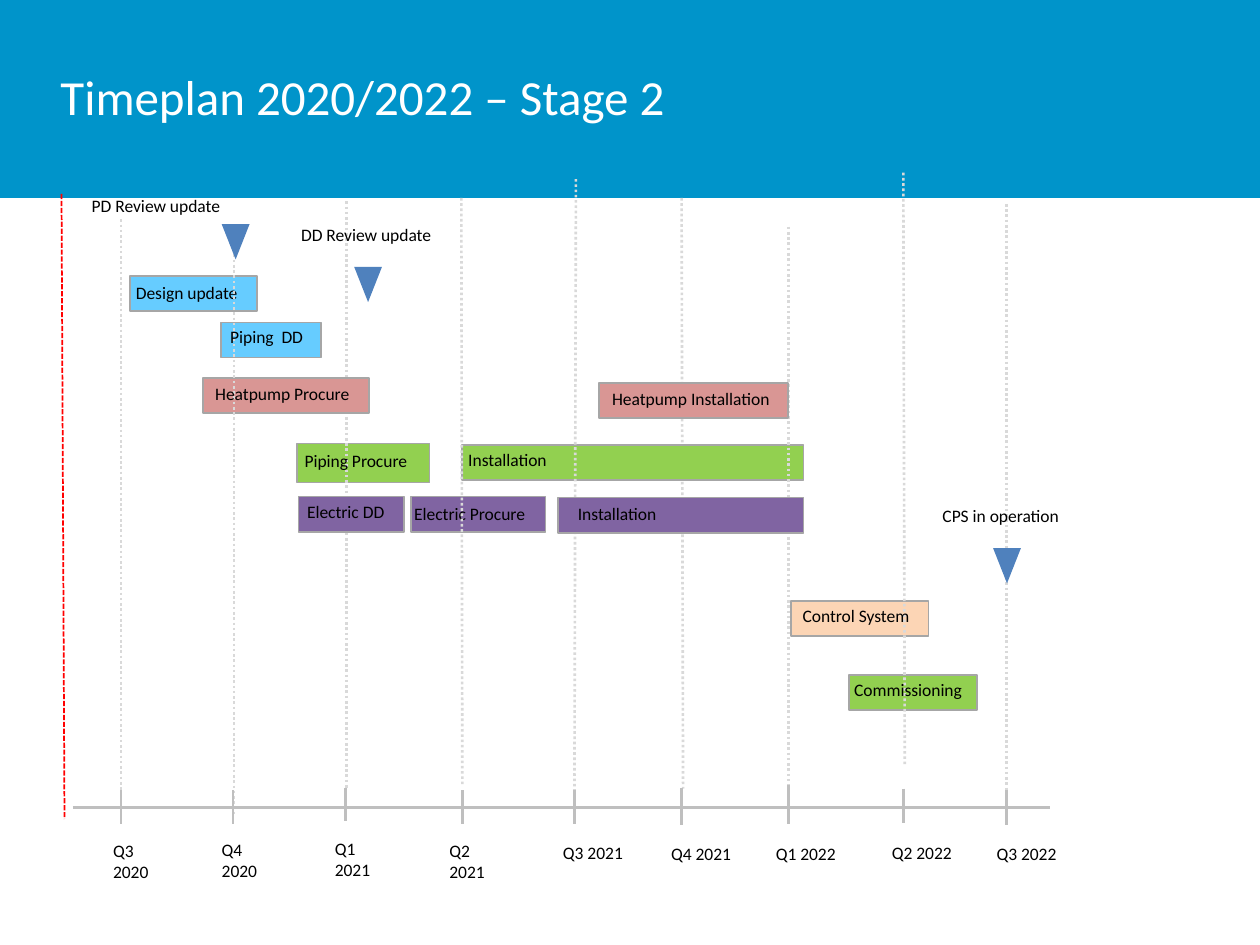
from lxml import etree
from pptx import Presentation
from pptx.dml.color import RGBColor as RGB
from pptx.enum.dml import MSO_LINE as Dash
from pptx.enum.shapes import MSO_CONNECTOR as Conn, MSO_SHAPE as Shape
from pptx.enum.text import MSO_ANCHOR as Anchor
from pptx.oxml.ns import qn
from pptx.util import Cm, Pt

COLORS = {
    "band": "0094CA", "white": "FFFFFF", "black": "000000", "edge": "A6A6A6",
    "sky": "66CCFF", "green": "92D050", "peach": "FCD5B5", "purple": "8064A2",
    "rose": "D99694", "marker": "4F81BD", "guide": "D9D9D9", "axis": "BFBFBF",
    "today": "FF0000",
}

# (name, colour, bar left/top/width/height, label left/top/width)
BACK_BARS = [
    ("Piping  DD", "sky", (4.45, 6.5, 2.03, 0.71), (4.39, 6.45, 2.31)),
    ("Piping Procure", "green", (5.99, 8.94, 2.67, 0.79), (5.89, 8.94, 2.82)),
    ("Commissioning", "green", (17.12, 13.61, 2.57, 0.71), (16.97, 13.56, 2.92)),
    ("Control System", "peach", (15.95, 12.12, 2.77, 0.71), (15.93, 12.07, 3)),
    ("Electric Procure", "purple", (8.28, 10.01, 2.72, 0.71), (8.1, 10.01, 3.1)),
]
DESIGN_BAR = ("Design update", "sky", (2.62, 5.56, 2.57, 0.71), (2.49, 5.56, 4.37))
MIDDLE_BARS = [
    ("Installation", "green", (9.32, 8.97, 6.88, 0.71), (9.19, 8.92, 3.99)),
    ("Electric DD", "purple", (6.02, 10.01, 2.13, 0.71), (5.94, 9.98, 2.29)),
    ("Heatpump Procure", "rose", (4.09, 7.62, 3.35, 0.71), (4.09, 7.59, 3.48)),
]
FRONT_BARS = [
    ("Installation", "purple", (11.25, 10.03, 4.95, 0.71), (11.4, 10.01, 4.22)),
    ("Heatpump Installation", "rose", (12.07, 7.72, 3.81, 0.71), (12.09, 7.7, 4.19)),
]

# Marker left/top, label left/top/width
MILESTONES = [
    ("PD Review update", (4.47, 4.52), (1.6, 3.81, 3.94)),
    ("DD Review update", (7.14, 5.38), (5.82, 4.39, 3.86)),
    ("CPS in operation", (20.02, 11.05), (18.75, 10.06, 3.43)),
]

# Tick x/top/bottom, label left/top/width
QUARTERS = [
    ("Q3 2020", (2.44, 15.93, 16.61), (2.03, 16.81, 1.5)),
    ("Q4 2020", (4.7, 15.93, 16.61), (4.22, 16.79, 1.5)),
    ("Q1 2021", (6.96, 15.88, 16.56), (6.5, 16.76, 1.45)),
    ("Q2 2021", (9.32, 15.93, 16.61), (8.81, 16.81, 1.45)),
    ("Q3 2021", (11.58, 15.93, 16.61), (11.1, 16.84, 1.8)),
    ("Q4 2021", (13.74, 15.88, 16.64), (13.28, 16.87, 1.8)),
    ("Q1 2022", (15.9, 15.82, 16.61), (15.39, 16.87, 1.8)),
    ("Q2 2022", (18.21, 15.9, 16.59), (17.73, 16.84, 1.8)),
    ("Q3 2022", (20.29, 15.93, 16.64), (19.84, 16.87, 1.8)),
]

# Dotted guides, from x/y to x/y, by drawing depth
BACK_GUIDES = [(13.74, 3.99, 13.77, 15.9), (6.98, 4.06, 6.98, 15.88)]
MIDDLE_GUIDES = [
    (18.21, 3.48, 18.24, 15.44), (2.44, 4.42, 2.44, 16.23),
    (4.72, 4.6, 4.72, 16.41), (11.61, 3.61, 11.58, 15.98),
    (15.9, 4.57, 15.9, 16.38), (20.29, 4.11, 20.29, 15.93),
]
FRONT_GUIDES = [(9.3, 3.99, 9.32, 15.82)]


class Timeplan:
    font = "Calibri"

    def __init__(self, slide):
        self.s = slide

    def color(self, name):
        return RGB.from_string(COLORS[name])

    def box(self, pos, fill, edge=None, kind=Shape.RECTANGLE, rotation=0):
        sp = self.s.shapes.add_shape(kind, *map(Cm, pos))
        sp.shadow.inherit = False
        sp.rotation = rotation
        sp.fill.solid()
        sp.fill.fore_color.rgb = self.color(fill)
        if edge:
            sp.line.color.rgb = self.color(edge)
            sp.line.width = Pt(1)
        else:
            sp.line.fill.background()

    def text(self, words, pos, size=10, color="black", **frame):
        sp = self.s.shapes.add_textbox(*map(Cm, pos))
        tf = sp.text_frame
        for key, value in {"word_wrap": True, **frame}.items():
            setattr(tf, key, value)
        r = tf.paragraphs[0].add_run()
        r.text = words
        for key, value in {"name": self.font, "size": Pt(size)}.items():
            setattr(r.font, key, value)
        r.font.color.rgb = self.color(color)

    def line(self, ends, color, width, dash=None):
        sp = self.s.shapes.add_connector(Conn.STRAIGHT, *map(Cm, ends))
        etree.SubElement(sp._element.spPr, qn("a:effectLst"))
        sp.line.color.rgb = self.color(color)
        sp.line.width = Pt(width)
        if dash:
            sp.line.dash_style = dash

    def bars(self, rows):
        for _, fill, pos, _ in rows:
            self.box(pos, fill, "edge")

    def labels(self, rows):
        for row in rows:
            self.text(row[0], (*row[-1], 0.7))

    def guides(self, rows):
        for ends in rows:
            self.line(ends, "guide", 1.5, Dash.ROUND_DOT)

    def marker(self, left, top):
        self.box((left, top, 0.56, 0.71), "marker",
                 kind=Shape.ISOSCELES_TRIANGLE, rotation=180)


def main():
    prs = Presentation()
    prs.slide_width, prs.slide_height = Cm(25.4), Cm(19.05)
    plan = Timeplan(prs.slides.add_slide(prs.slide_layouts[6]))

    # Title band
    plan.box((0, 0, 25.4, 3.99), "band")
    plan.text("Timeplan 2020/2022 – Stage 2", (1.22, 1.09, 22.02, 1.7), 28, "white",
              vertical_anchor=Anchor.MIDDLE, margin_left=0, margin_right=0,
              margin_top=0, margin_bottom=0)

    # Bars and guides, from back to front
    plan.bars(BACK_BARS)
    plan.line((1.24, 3.91, 1.3, 16.51), "today", 1, Dash.SQUARE_DOT)
    plan.guides(BACK_GUIDES)
    plan.bars([DESIGN_BAR, *MIDDLE_BARS])
    plan.labels([DESIGN_BAR])
    plan.guides(MIDDLE_GUIDES)
    plan.bars(FRONT_BARS)
    plan.labels(BACK_BARS + MIDDLE_BARS + FRONT_BARS)
    plan.guides(FRONT_GUIDES)

    # Milestones
    for _, corner, _ in MILESTONES:
        plan.marker(*corner)
    plan.labels(MILESTONES)

    # Time axis
    plan.line((1.47, 16.28, 21.16, 16.28), "axis", 2)
    for _, (x, top, bottom), _ in QUARTERS:
        plan.line((x, top, x, bottom), "axis", 1.5)
    plan.labels(QUARTERS)

    prs.save("out.pptx")


if __name__ == "__main__":
    main()
